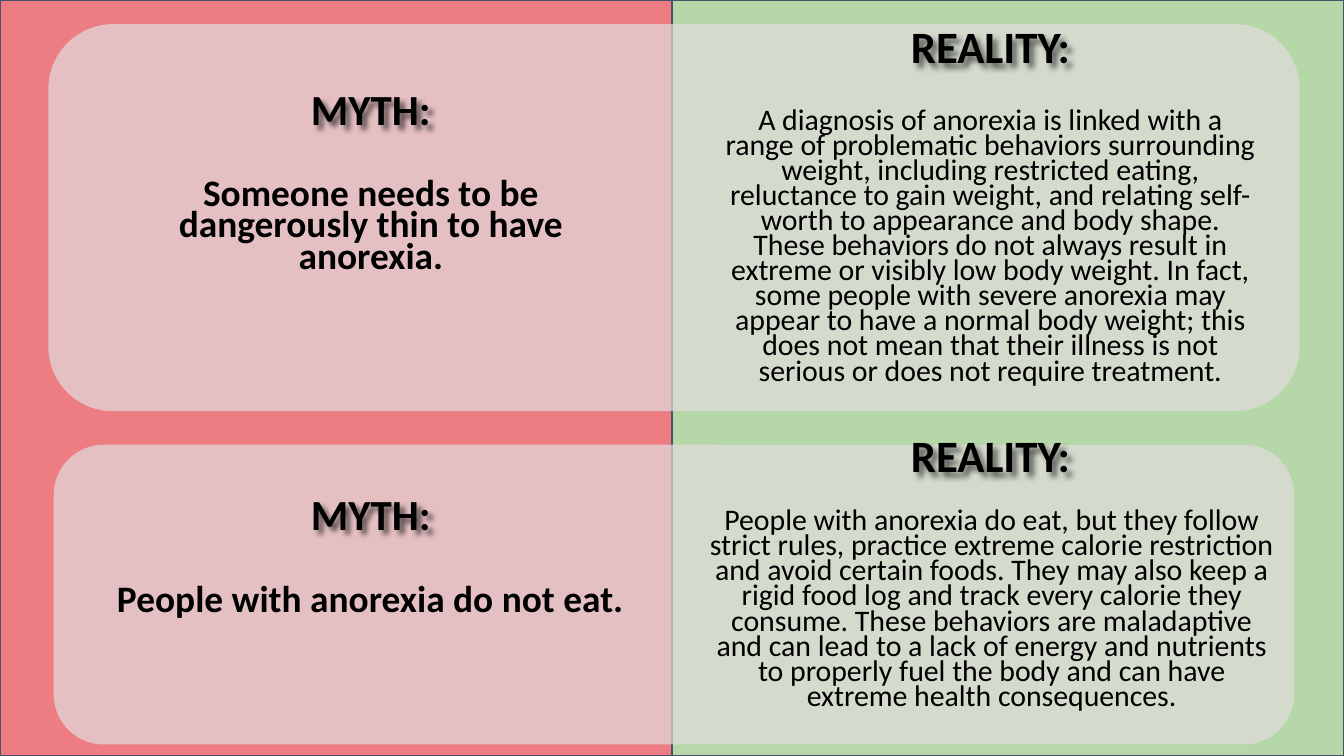
from lxml.etree import SubElement
from pptx import Presentation
from pptx.dml.color import RGBColor
from pptx.enum.shapes import MSO_SHAPE
from pptx.enum.text import MSO_ANCHOR, MSO_AUTO_SIZE, PP_ALIGN
from pptx.oxml import parse_xml
from pptx.oxml.ns import nsdecls, qn
from pptx.util import Inches, Pt

WIDE = 10
HIGH = WIDE * 9 / 16
HALF = WIDE / 2

THEME = {
    "font": "Calibri", "ink": "000000", "edge": "44546A",
    "myth": "ED7C83", "real": "B6D7A8", "panel": "E2DEDE",
    "alpha": 70, "round": 0.167,
}
# Text styles: size, bold, line spacing, left inset, shadow
STYLES = {
    "myth head": (23, True, 0.8, 0.07, True),
    "myth": (20, True, 0.7, 0.07, False),
    "real head": (24, True, 0.8, 0.26, True),
    "real": (16, False, 0.7, 0.26, False),
}

# Each row: panel box, then (style, box, words)
ROWS = [
    ((0.36, 0.18, 9.31, 2.88), [
        ("myth head", (0.76, 0.65, 4, 0.51), "MYTH:"),
        ("myth", (0.76, 1.31, 4, 0.96),
         "Someone needs to be dangerously thin to have anorexia."),
        ("real head", (5.12, 0.18, 4.31, 0.61), "REALITY:"),
        ("real", (5.12, 0.78, 4.31, 2.1),
         "A diagnosis of anorexia is linked with a range of problematic "
         "behaviors surrounding weight, including restricted eating, "
         "reluctance to gain weight, and relating self-worth to appearance "
         "and body shape. These behaviors do not always result in extreme or "
         "visibly low body weight. In fact, some people with severe anorexia "
         "may appear to have a normal body weight; this does not mean that "
         "their illness is not serious or does not require treatment."),
    ]),
    ((0.4, 3.31, 9.23, 2.23), [
        ("myth head", (0.76, 3.66, 4, 0.51), "MYTH:"),
        ("myth", (0.6, 4.33, 4.31, 0.86), "People with anorexia do not eat."),
        ("real head", (5.12, 3.22, 4.31, 0.61), "REALITY:"),
        ("real", (5.01, 3.76, 4.55, 1.6),
         "People with anorexia do eat, but they follow strict rules, practice "
         "extreme calorie restriction and avoid certain foods. They may also "
         "keep a rigid food log and track every calorie they consume. These "
         "behaviors are maladaptive and can lead to a lack of energy and "
         "nutrients to properly fuel the body and can have extreme health "
         "consequences."),
    ]),
]

SHADOW = (f'<a:effectLst {nsdecls("a")}><a:outerShdw blurRad="38100" '
          'dist="38100" dir="2700000" algn="tl"><a:srgbClr val="000000">'
          '<a:alpha val="60000"/></a:srgbClr></a:outerShdw></a:effectLst>')


def color(name):
    return RGBColor.from_string(THEME[name])


def block(slide, kind, box, fill):
    shape = slide.shapes.add_shape(kind, *map(Inches, box))
    shape.shadow.inherit = False
    shape.fill.solid()
    shape.fill.fore_color.rgb = color(fill)
    return shape


def half(slide, left, fill):
    shape = block(slide, MSO_SHAPE.RECTANGLE, (left, 0, HALF, HIGH), fill)
    shape.line.color.rgb = color("edge")
    shape.line.width = Pt(0.75)


def panel(slide, box):
    shape = block(slide, MSO_SHAPE.ROUNDED_RECTANGLE, box, "panel")
    shape.adjustments[0] = THEME["round"]
    shape.line.fill.background()
    tint = shape.element.spPr.find(qn("a:solidFill"))[0]
    SubElement(tint, qn("a:alpha"), val=str(THEME["alpha"] * 1000))


def write(shape, style, box, words):
    size, bold, gap, inset, shadow = STYLES[style]
    shape.left, shape.top, shape.width, shape.height = map(Inches, box)
    frame = shape.text_frame
    frame.word_wrap = True
    frame.auto_size = MSO_AUTO_SIZE.NONE
    frame.vertical_anchor = MSO_ANCHOR.TOP
    frame.margin_left, frame.margin_right = Inches(inset), Inches(0.07)
    frame.margin_top = frame.margin_bottom = Inches(0.04)
    frame.text = words
    para = frame.paragraphs[0]
    props = para._p.get_or_add_pPr()
    props.set("marL", "0")
    props.set("indent", "0")
    SubElement(props, qn("a:buNone"))
    para.alignment = PP_ALIGN.CENTER
    para.line_spacing = gap
    para.space_before = Pt(0)
    font = para.runs[0].font
    font.name, font.size, font.bold = THEME["font"], Pt(size), bold
    font.color.rgb = color("ink")
    if shadow:  # an unfilled shape casts the shadow of its text
        shape.fill.background()
        shape.element.spPr.append(parse_xml(SHADOW))


def main():
    deck = Presentation()
    deck.slide_width, deck.slide_height = Inches(WIDE), Inches(HIGH)
    slide = deck.slides.add_slide(deck.slide_layouts.get_by_name("Comparison"))
    title, *slots = slide.placeholders
    title.element.getparent().remove(title.element)

    half(slide, HALF, "real")
    half(slide, 0, "myth")
    for box, texts in ROWS:
        panel(slide, box)
        for style, place, words in texts:
            if slots:
                shape = slots.pop(0)
                slide.shapes.element.append(shape.element)  # bring to front
            else:
                shape = slide.shapes.add_textbox(*map(Inches, place))
            write(shape, style, place, words)
    deck.save("out.pptx")


if __name__ == "__main__":
    main()
